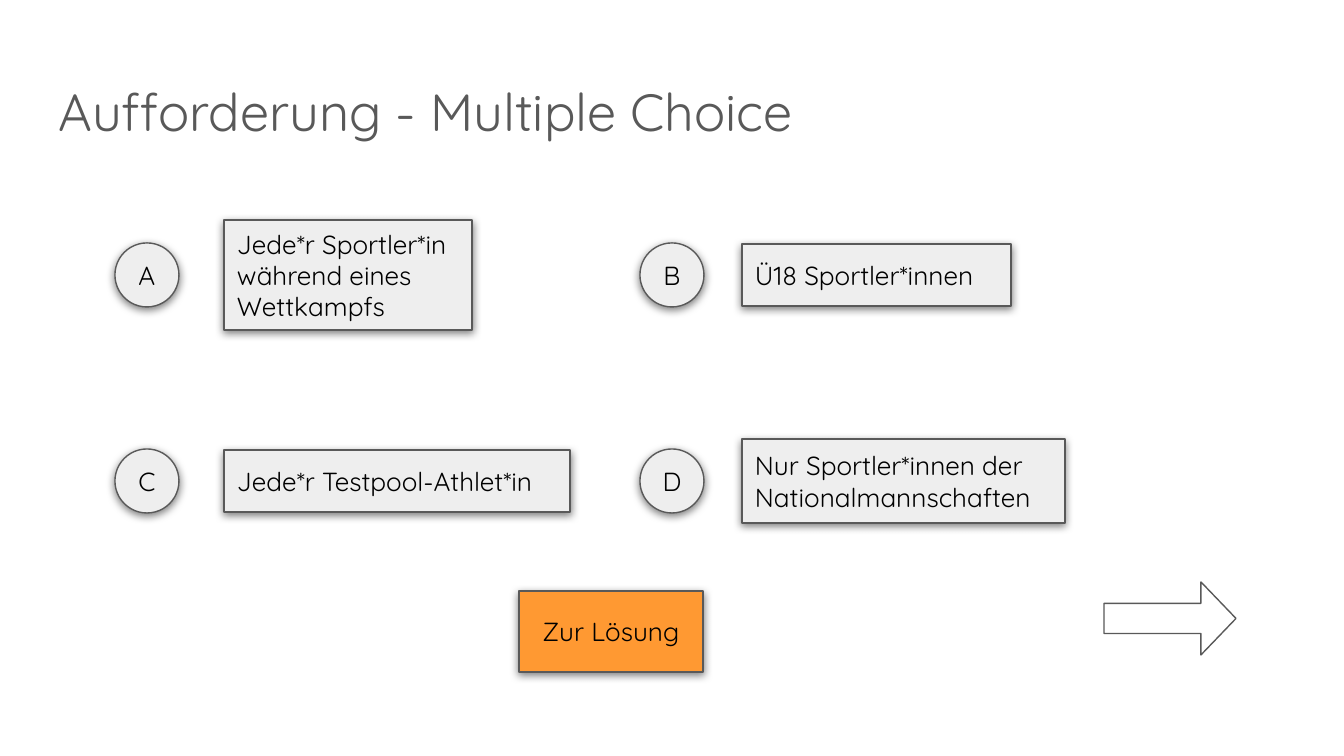
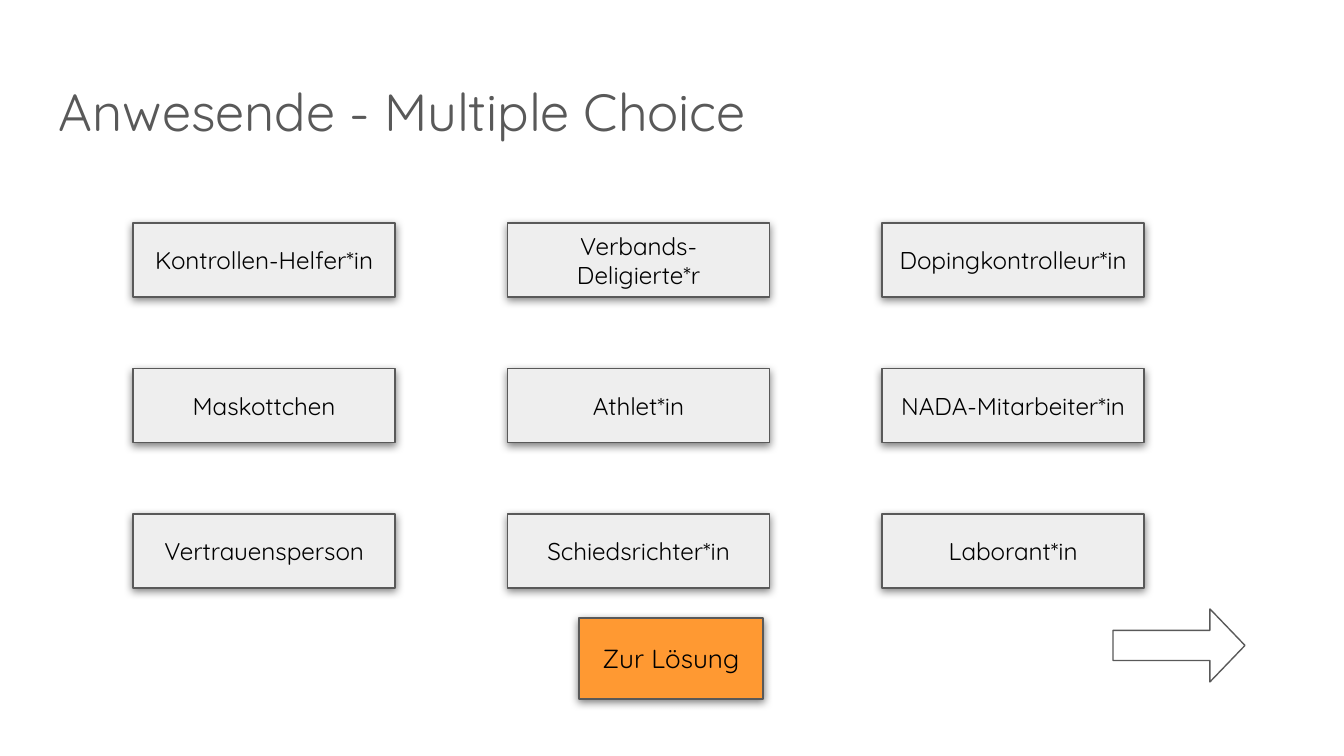
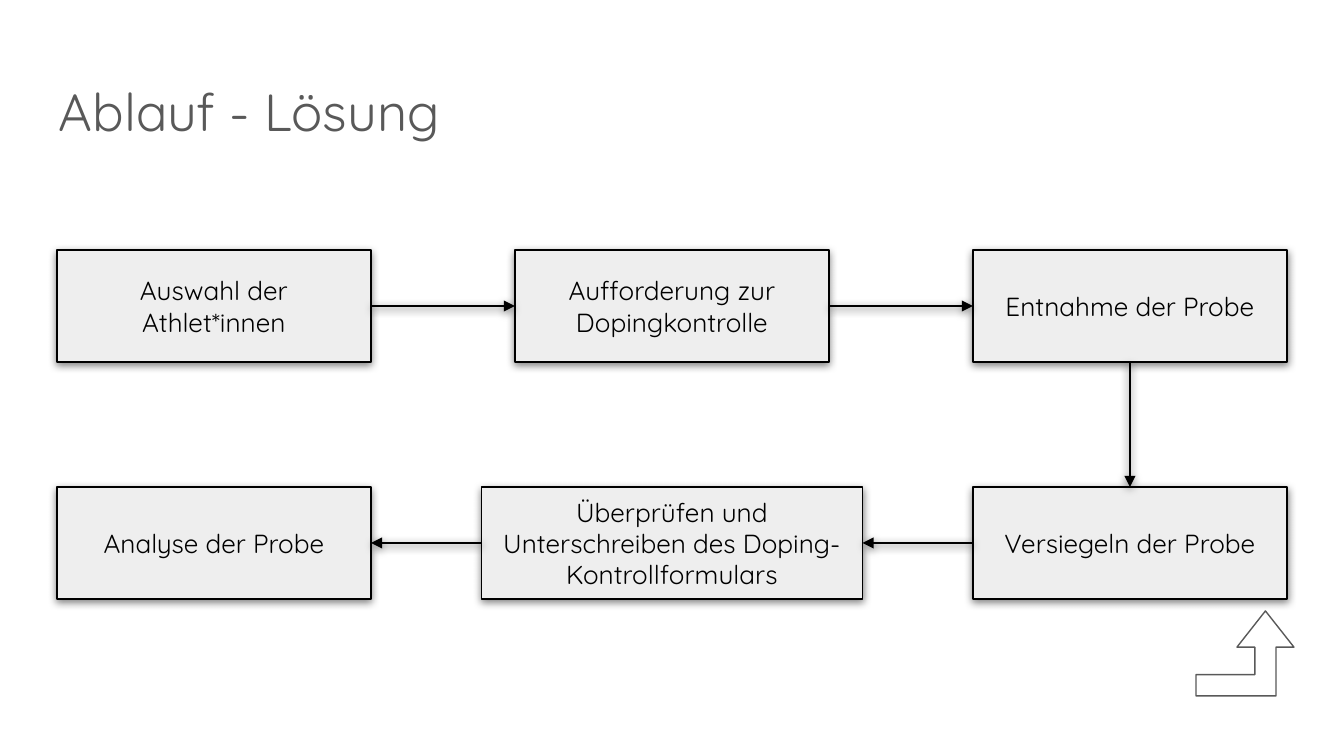
import pptx
import pptx.dml.color
import pptx.enum.shapes
import pptx.enum.text
import pptx.oxml
import pptx.oxml.ns
import pptx.util

SHAPE = pptx.enum.shapes.MSO_SHAPE
ALIGN = pptx.enum.text.PP_ALIGN
ANCHOR = pptx.enum.text.MSO_ANCHOR

FONT = "Quicksand"
COLORS = {
    "background": "FFFFFF",
    "heading": "595959",
    "outline": "595959",
    "card": "EEEEEE",
    "button": "FF9932",
    "ink": "000000",
}
EMU_PER_PX = 914400 / 134.4
SLIDE_SIZE = (1344, 756)
TITLE_BOX = (46, 66, 1116, 85)
BUTTON_SIZE = (184, 81)
ARROW_SIZE = (132, 73)
TOP, LEFT, BOTTOM, RIGHT = range(4)


def px(length):
    return pptx.util.Emu(round(length * EMU_PER_PX))


def color(name):
    return pptx.dml.color.RGBColor.from_string(COLORS[name])


def add_shadow(element):
    """Give a shape or connector the soft shadow below it."""
    ns = pptx.oxml.ns.nsdecls("a")
    properties = element._element.spPr
    for old in properties.findall(pptx.oxml.ns.qn("a:effectLst")):
        properties.remove(old)
    properties.append(pptx.oxml.parse_xml(
        f'<a:effectLst {ns}><a:outerShdw blurRad="57150" dist="19050" dir="5400000" '
        f'algn="bl" rotWithShape="0"><a:srgbClr val="{COLORS["ink"]}">'
        '<a:alpha val="50000"/></a:srgbClr></a:outerShdw></a:effectLst>'))


def write(frame, text, size, ink="ink", align=ALIGN.CENTER, anchor=ANCHOR.MIDDLE, inset_y=13):
    frame.word_wrap = True
    frame.vertical_anchor = anchor
    frame.margin_left = frame.margin_right = px(13)
    frame.margin_top = frame.margin_bottom = px(inset_y)
    paragraph = frame.paragraphs[0]
    paragraph.alignment = align
    run = paragraph.add_run()
    run.text = text
    run.font.name = FONT
    run.font.size = pptx.util.Pt(size)
    run.font.color.rgb = color(ink)


def add_card(slide, box, text, size=14, kind=SHAPE.RECTANGLE, fill="card", outline="outline", **style):
    card = slide.shapes.add_shape(kind, *map(px, box))
    card.fill.solid()
    card.fill.fore_color.rgb = color(fill)
    card.line.color.rgb = color(outline)
    card.line.width = pptx.util.Pt(0.75)
    add_shadow(card)
    write(card.text_frame, text, size, **style)
    return card


def add_block_arrow(slide, kind, box, adjustments):
    arrow = slide.shapes.add_shape(kind, *map(px, box))
    arrow.shadow.inherit = False
    arrow.fill.background()
    arrow.line.color.rgb = color("outline")
    arrow.line.width = pptx.util.Pt(0.75)
    for index, value in enumerate(adjustments):
        arrow.adjustments[index] = value


def add_step_arrow(slide, start, start_side, end, end_side):
    link = slide.shapes.add_connector(pptx.enum.shapes.MSO_CONNECTOR.STRAIGHT, 0, 0, 0, 0)
    link.begin_connect(start, start_side)
    link.end_connect(end, end_side)
    link.line.color.rgb = color("ink")
    link.line.width = pptx.util.Pt(1.5)
    link.line._get_or_add_ln().append(pptx.oxml.parse_xml(
        f'<a:tailEnd {pptx.oxml.ns.nsdecls("a")} type="triangle"/>'))
    add_shadow(link)


def add_titled_slide(deck, title):
    slide = deck.slides.add_slide(deck.slide_layouts[6])
    slide.background.fill.solid()
    slide.background.fill.fore_color.rgb = color("background")
    heading = slide.shapes.add_textbox(*map(px, TITLE_BOX))
    write(heading.text_frame, title, 28, "heading", ALIGN.LEFT, ANCHOR.TOP)
    return slide


def add_navigation(slide, button_at, arrow_at):
    add_block_arrow(slide, SHAPE.RIGHT_ARROW, arrow_at + ARROW_SIZE, (0.413, 0.48))
    add_card(slide, button_at + BUTTON_SIZE, "Zur Lösung", fill="button")


def add_answer(slide, letter, box, gap, text):
    """Place a lettered circle at the left of the box and its answer, centred in height, at the right."""
    left, top, width, height = box
    middle = top + height / 2
    diameter = 64
    add_card(slide, (left, middle - diameter / 2, diameter, diameter), letter, kind=SHAPE.OVAL)
    offset = diameter + gap
    add_card(slide, (left + offset, top, width - offset, height), text, align=ALIGN.LEFT)


def build_request_slide(deck):
    slide = add_titled_slide(deck, "Aufforderung - Multiple Choice")
    answers = [
        ("A", (115, 220, 357, 110), 45, "Jede*r Sportler*in während eines Wettkampfs"),
        ("B", (640, 244, 371, 62), 38, "Ü18 Sportler*innen"),
        ("C", (115, 450, 455, 62), 45, "Jede*r Testpool-Athlet*in"),
        ("D", (640, 439, 425, 84), 38, "Nur Sportler*innen der Nationalmannschaften"),
    ]
    for answer in answers:
        add_answer(slide, *answer)
    add_navigation(slide, (519, 591), (1104, 582))


def add_role_grid(slide, box, roles, card_size):
    """Spread the rows of roles evenly over the box."""
    left, top, width, height = box
    card_width, card_height = card_size
    step_x = (width - card_width) / (len(roles[0]) - 1)
    step_y = (height - card_height) / (len(roles) - 1)
    for row, names in enumerate(roles):
        for column, name in enumerate(names):
            place = (left + column * step_x, top + row * step_y)
            add_card(slide, place + card_size, name, size=13)


def build_attendees_slide(deck):
    slide = add_titled_slide(deck, "Anwesende - Multiple Choice")
    roles = [
        ("Kontrollen-Helfer*in", "Verbands-Deligierte*r", "Dopingkontrolleur*in"),
        ("Maskottchen", "Athlet*in", "NADA-Mitarbeiter*in"),
        ("Vertrauensperson", "Schiedsrichter*in", "Laborant*in"),
    ]
    add_role_grid(slide, (133, 223, 1011, 365), roles, (262, 74))
    add_navigation(slide, (579, 618), (1113, 609))


def add_process(slide, box, steps):
    """Lay out (text, column, row, width) steps in the box and link each to the next."""
    left, top, width, height = box
    column_width, card_height = 314, 112
    step_x = (width - column_width) / 2
    cards = []
    for text, column, row, card_width in steps:
        center = left + column * step_x + column_width / 2
        place = (center - card_width / 2, top + row * (height - card_height))
        cards.append(add_card(slide, place + (card_width, card_height), text,
                              outline="ink", inset_y=7))
    for index, (start, end) in enumerate(zip(cards, cards[1:])):
        _, column, row, _ = steps[index]
        _, next_column, next_row, _ = steps[index + 1]
        if next_row > row:
            sides = BOTTOM, TOP
        elif next_column > column:
            sides = RIGHT, LEFT
        else:
            sides = LEFT, RIGHT
        add_step_arrow(slide, start, sides[0], end, sides[1])


def build_process_slide(deck):
    slide = add_titled_slide(deck, "Ablauf - Lösung")
    steps = [
        ("Auswahl der Athlet*innen", 0, 0, 314),
        ("Aufforderung zur Dopingkontrolle", 1, 0, 314),
        ("Entnahme der Probe", 2, 0, 314),
        ("Versiegeln der Probe", 2, 1, 314),
        ("Überprüfen und Unterschreiben des Doping-Kontrollformulars", 1, 1, 381),
        ("Analyse der Probe", 0, 1, 314),
    ]
    add_process(slide, (57, 250, 1230, 349), steps)
    add_block_arrow(slide, SHAPE.BENT_UP_ARROW, (1196, 611, 98, 85), (0.25, 0.335, 0.426))


def main():
    deck = pptx.Presentation()
    deck.slide_width, deck.slide_height = map(px, SLIDE_SIZE)
    build_request_slide(deck)
    build_attendees_slide(deck)
    build_process_slide(deck)
    deck.save("out.pptx")


if __name__ == "__main__":
    main()
